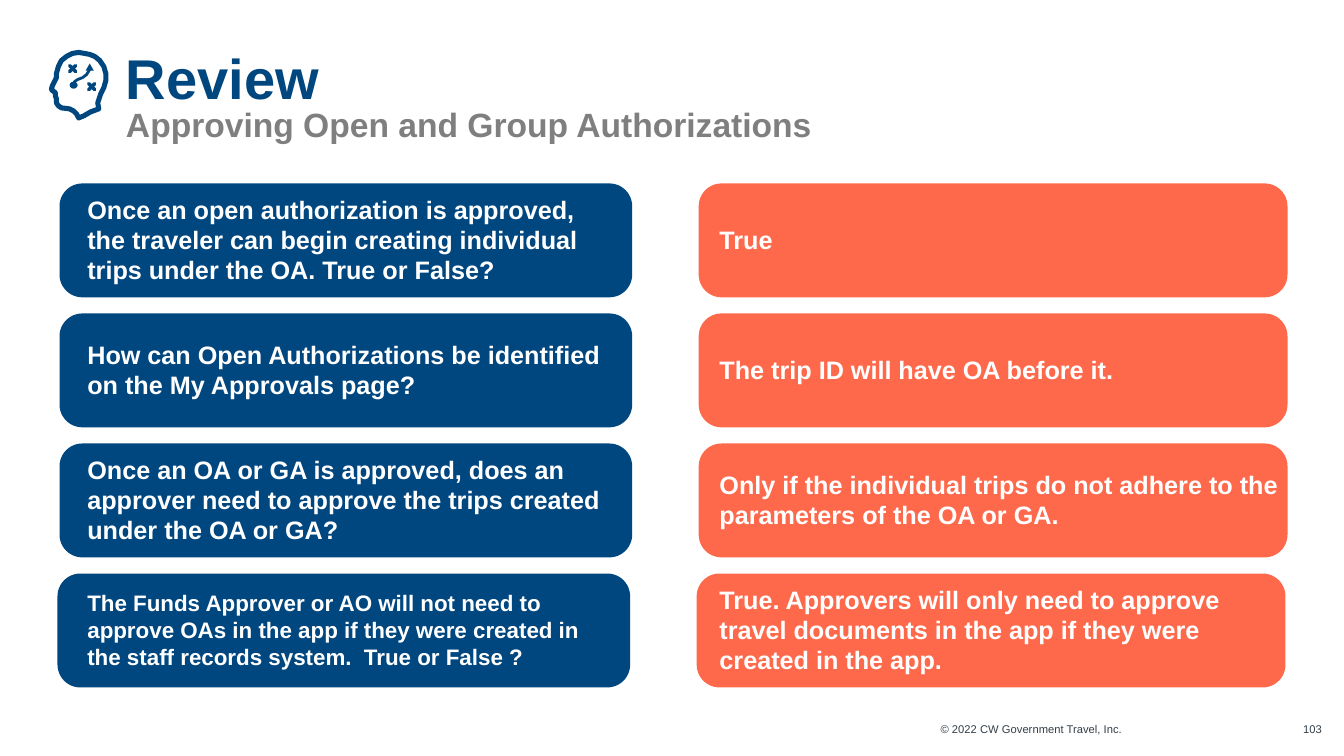
import lxml.etree
import pptx
import pptx.dml.color
import pptx.enum.shapes
import pptx.enum.text
import pptx.oxml.ns
import pptx.util

Inches = pptx.util.Inches
ANCHOR = pptx.enum.text.MSO_ANCHOR
ALIGN = pptx.enum.text.PP_ALIGN
SHAPE = pptx.enum.shapes.MSO_SHAPE

NAVY, CORAL, GRAY, SLATE, WHITE = "00467F", "FF694B", "7F7F7F", "333F48", "FFFFFF"

ROW_TOP, ROW_STEP, CARD_HEIGHT = 1.82, 1.29, 1.13
QUESTION = {"left": 0.59, "width": 5.68, "text_left": 0.8, "margin_right": 0.21, "fill": NAVY}
ANSWER = {"left": 6.93, "width": 5.84, "text_left": 7.07, "margin_right": 0, "fill": CORAL}

# Question paragraphs, question size, answer, shift of the row to the left
ROWS = [
    (["Once an open authorization is approved, the traveler can begin creating "
      "individual trips under the OA. True or False?"], 18, "True", 0),
    (["How can Open Authorizations be identified on the My Approvals page?"], 18,
     "The trip ID will have OA before it.", 0),
    (["Once an OA or GA is approved, does an approver need to approve the trips created",
      "under the OA or GA?"], 18,
     "Only if the individual trips do not adhere to the parameters of the OA or GA.", 0),
    (["The Funds Approver or AO will not need to approve OAs in the app if they were created "
      "in the staff records system.  True or False ?"], 16,
     "True. Approvers will only need to approve travel documents in the app if they were "
     "created in the app.", 0.02),
]

HEAD = [
    (0.98, 1.08), (0.97, 1.02), (1.00, 0.93), (1.03, 0.87), (1.05, 0.80), (1.05, 0.73),
    (1.03, 0.66), (0.99, 0.60), (0.94, 0.56), (0.89, 0.54), (0.84, 0.53), (0.78, 0.52),
    (0.72, 0.53), (0.66, 0.56), (0.61, 0.60), (0.58, 0.66), (0.56, 0.73), (0.56, 0.77),
    (0.54, 0.81), (0.52, 0.85), (0.51, 0.89), (0.55, 0.92), (0.55, 0.95), (0.56, 0.98),
    (0.56, 1.02), (0.58, 1.05), (0.61, 1.07), (0.69, 1.08), (0.73, 1.10), (0.76, 1.13),
    (0.78, 1.17), (0.83, 1.15), (0.90, 1.11),
]
ROUTE = [(0.73, 0.85), (0.74, 0.81), (0.77, 0.79), (0.82, 0.77), (0.86, 0.74), (0.89, 0.69)]
ROUTE_TIP = [(0.85, 0.70), (0.89, 0.63), (0.93, 0.70)]
CROSS_CENTERS = [(0.72, 0.68), (0.91, 0.86)]
CROSS_REACH = 0.03


def color(value):
    return pptx.dml.color.RGBColor.from_string(value)


def set_fill(shape, value):
    shape.shadow.inherit = False
    shape.fill.solid()
    shape.fill.fore_color.rgb = color(value)
    shape.line.fill.background()


def set_round_line(shape, width):
    """Give a shape or connector a navy line with round ends and corners."""
    shape.line.color.rgb = color(NAVY)
    shape.line.width = pptx.util.Pt(width)
    line = shape.line._get_or_add_ln()
    line.set("cap", "rnd")
    lxml.etree.SubElement(line, pptx.oxml.ns.qn("a:round"))


def set_font(font, size, value, bold=True):
    formats = {"name": "Arial", "size": pptx.util.Pt(size), "bold": bold}
    for name, setting in formats.items():
        setattr(font, name, setting)
    font.color.rgb = color(value)


def set_frame(frame, anchor, left=0, right=0, bottom=0):
    formats = {
        "word_wrap": True, "vertical_anchor": anchor,
        "margin_left": Inches(left), "margin_right": Inches(right),
        "margin_top": 0, "margin_bottom": Inches(bottom),
    }
    for name, setting in formats.items():
        setattr(frame, name, setting)


def add_text_box(slide, left, top, width, height):
    box = slide.shapes.add_textbox(*map(Inches, (left, top, width, height)))
    set_frame(box.text_frame, ANCHOR.TOP)
    return box.text_frame.paragraphs[0]


def add_outline(slide, points, close):
    corners = [(Inches(x), Inches(y)) for x, y in points]
    builder = slide.shapes.build_freeform(*corners[0])
    builder.add_line_segments(corners[1:], close=close)
    return builder.convert_to_shape()


def add_stroke(slide, points, width, close=False):
    shape = add_outline(slide, points, close)
    shape.shadow.inherit = False
    shape.fill.background()
    set_round_line(shape, width)


def add_cross(slide, x, y):
    for rise in (-CROSS_REACH, CROSS_REACH):
        ends = (x - CROSS_REACH, y - rise, x + CROSS_REACH, y + rise)
        connector = slide.shapes.add_connector(
            pptx.enum.shapes.MSO_CONNECTOR.STRAIGHT, *map(Inches, ends))
        set_round_line(connector, 2.5)
        lxml.etree.SubElement(connector._element.spPr, pptx.oxml.ns.qn("a:effectLst"))


def add_strategy_icon(slide):
    add_stroke(slide, HEAD, 3.6, close=True)
    add_stroke(slide, ROUTE, 2)
    set_fill(add_outline(slide, ROUTE_TIP, True), NAVY)
    dot = slide.shapes.add_shape(SHAPE.OVAL, *map(Inches, (0.69, 0.81, 0.08, 0.07)))
    set_fill(dot, NAVY)
    for x, y in CROSS_CENTERS:
        add_cross(slide, x, y)


def add_title(slide, title, subtitle):
    paragraph = add_text_box(slide, 1.25, 0.53, 11.53, 0.92)
    paragraph.line_spacing = 0.85
    for text, size, value in ((title, 40, NAVY), (subtitle, 24, GRAY)):
        if paragraph.runs:
            paragraph.add_line_break()
        run = paragraph.add_run()
        run.text = text
        set_font(run.font, size, value)


def add_card(slide, column, top, shift, texts, size):
    left = column["left"] - shift
    card = slide.shapes.add_shape(
        SHAPE.ROUNDED_RECTANGLE,
        *map(Inches, (left, top, column["width"], CARD_HEIGHT)))
    card.adjustments[0] = 0.2
    set_fill(card, column["fill"])
    frame = card.text_frame
    set_frame(frame, ANCHOR.MIDDLE, column["text_left"] - left, column["margin_right"], 0.02)
    frame.text = "\n".join(texts)
    for paragraph in frame.paragraphs:
        paragraph.alignment = ALIGN.LEFT
        set_font(paragraph.font, size, WHITE)


def add_footer(slide, text, left, width):
    paragraph = add_text_box(slide, left, 7.17, width, 0.14)
    paragraph.text = text
    paragraph.alignment = ALIGN.RIGHT
    set_font(paragraph.font, 8, SLATE, bold=False)


def main():
    presentation = pptx.Presentation()
    presentation.slide_width = Inches(13.33)
    presentation.slide_height = Inches(7.5)
    slide = presentation.slides.add_slide(presentation.slide_layouts[6])

    add_strategy_icon(slide)
    add_title(slide, "Review", "Approving Open and Group Authorizations")
    for index, (question, size, answer, shift) in enumerate(ROWS):
        top = ROW_TOP + index * ROW_STEP
        add_card(slide, QUESTION, top, shift, question, size)
        add_card(slide, ANSWER, top, shift, [answer], 18)
    add_footer(slide, "© 2022 CW Government Travel, Inc.", 8.38, 2.75)
    add_footer(slide, "103", 12.78, 0.33)

    presentation.save("out.pptx")


if __name__ == "__main__":
    main()
